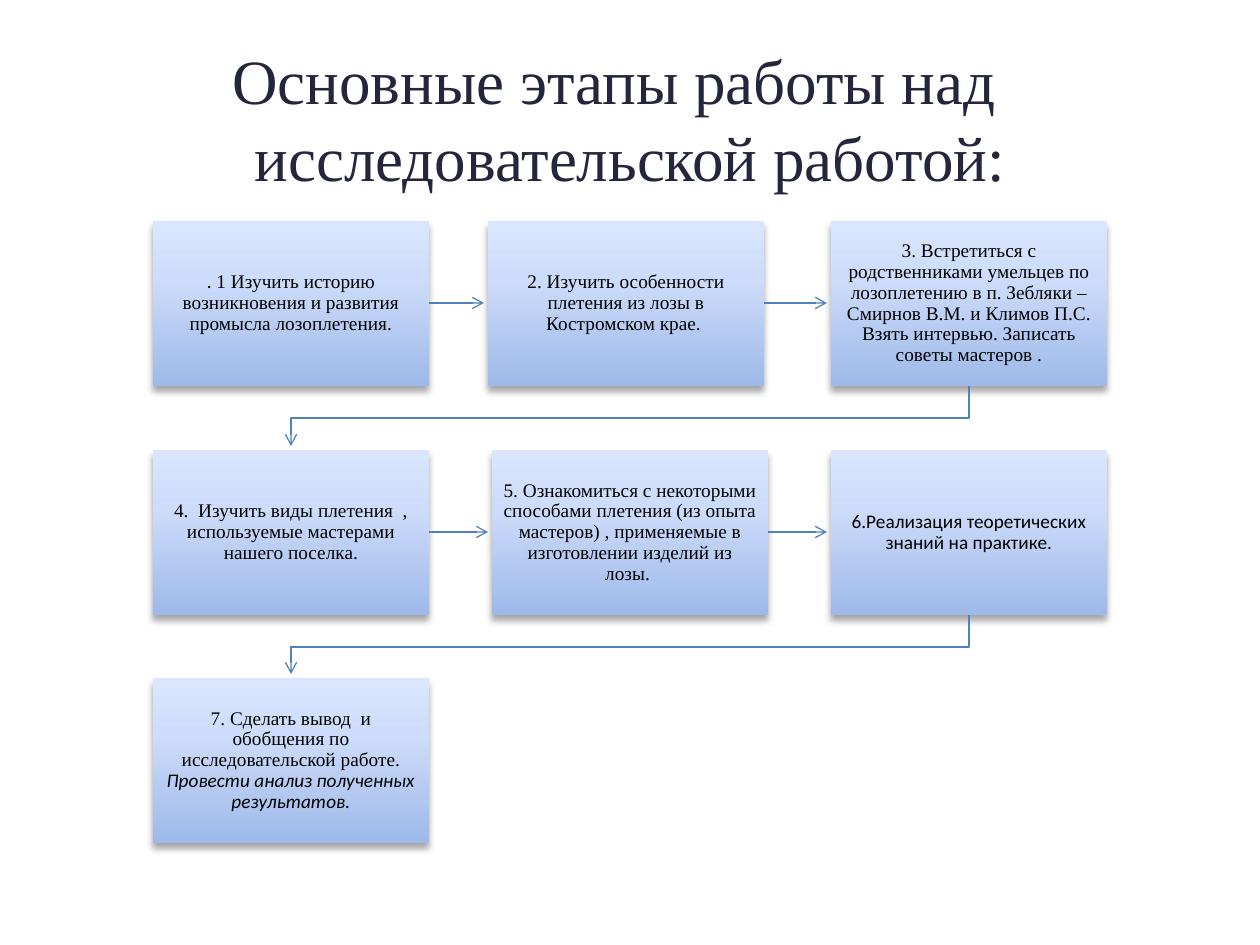
from lxml import etree
from pptx import Presentation
from pptx.dml.color import RGBColor
from pptx.enum.shapes import MSO_CONNECTOR, MSO_SHAPE
from pptx.enum.text import MSO_ANCHOR, PP_ALIGN
from pptx.oxml import parse_xml
from pptx.oxml.ns import nsdecls, qn
from pptx.util import Pt

PX = 914400 // 126
STRAIGHT = MSO_CONNECTOR.STRAIGHT
RECT = MSO_SHAPE.RECTANGLE
MIDDLE = MSO_ANCHOR.MIDDLE
CENTER = PP_ALIGN.CENTER

INK = RGBColor(0x24, 0x26, 0x3C)
BLACK = RGBColor(0x00, 0x00, 0x00)
BLUE = RGBColor(0x4F, 0x81, 0xBD)
GRADIENT = (
    (0, RGBColor(0x9E, 0xB9, 0xEA)),
    (65, RGBColor(0xCD, 0xDC, 0xFA)),
    (100, RGBColor(0xD9, 0xE6, 0xFE)),
)
SERIF, SANS = "Times New Roman", "Calibri"

BOX_W, BOX_H = 276, 165
ARROW_GAP = 4
ELBOW_DROP = 32
TITLE = "Основные этапы работы над  \vисследовательской работой:"
ROWS = (
    (221, (
        (153, ((".", SANS, False),
               (" 1 Изучить историю возникновения и развития промысла лозоплетения.", SERIF, False))),
        (488, (("2. Изучить особенности плетения из лозы в Костромском крае. ", SERIF, False),)),
        (831, (("3. Встретиться с родственниками умельцев по лозоплетению в п. Зебляки – "
                "Смирнов В.М. и Климов П.С. Взять интервью. Записать советы мастеров .", SERIF, False),)),
    )),
    (450, (
        (153, (("4.  Изучить виды плетения  , используемые мастерами нашего поселка.", SERIF, False),)),
        (492, (("5. Ознакомиться с некоторыми способами плетения (из опыта мастеров) , "
                "применяемые в изготовлении изделий из лозы. ", SERIF, False),)),
        (831, (("6.Реализация теоретических знаний на практике.", SANS, False),)),
    )),
    (678, (
        (153, (("7. Сделать вывод  и обобщения по исследовательской работе. ", SERIF, False),
               ("Провести анализ полученных результатов.", SANS, True))),
    )),
)


def add_title(s, x, y, w, h):
    """Place the centred two-line heading in its box."""
    sp = s.shapes.add_textbox(x * PX, y * PX, w * PX, h * PX)
    tf = sp.text_frame
    tf.word_wrap = True
    tf.vertical_anchor = MIDDLE
    p = tf.paragraphs[0]
    p.text = TITLE
    p.alignment = CENTER
    p.line_spacing = Pt(44)
    for r in p.runs:
        r.font.name, r.font.size = SERIF, Pt(36)
        r.font.color.rgb = INK


def style_box(sp):
    """Give a step box its three-stop gradient and soft shadow."""
    stops = "".join(
        f'<a:gs pos="{pos * 1000}"><a:srgbClr val="{color}"/></a:gs>' for pos, color in GRADIENT
    )
    sp.line.fill.background()
    sp.shadow.inherit = False
    spPr = sp.element.spPr
    spPr.find(qn("a:ln")).addprevious(parse_xml(
        f'<a:gradFill {nsdecls("a")} rotWithShape="1"><a:gsLst>{stops}</a:gsLst>'
        '<a:lin ang="16200000" scaled="0"/></a:gradFill>'
    ))
    spPr.find(qn("a:effectLst")).append(parse_xml(
        f'<a:outerShdw {nsdecls("a")} blurRad="{Pt(4)}" dist="{Pt(3)}" dir="5400000" rotWithShape="0">'
        f'<a:srgbClr val="{BLACK}"><a:alpha val="35000"/></a:srgbClr></a:outerShdw>'
    ))


def add_step(s, x, y, runs):
    """Place one step box with its centred text."""
    sp = s.shapes.add_shape(RECT, x * PX, y * PX, BOX_W * PX, BOX_H * PX)
    style_box(sp)
    tf = sp.text_frame
    tf.word_wrap = True
    tf.vertical_anchor = MIDDLE
    tf.margin_left = tf.margin_right = tf.margin_top = tf.margin_bottom = 11 * PX
    p = tf.paragraphs[0]
    p.alignment = CENTER
    p.line_spacing = 0.9
    for text, font, italic in runs:
        r = p.add_run()
        r.text = text
        r.font.name, r.font.size = font, Pt(11)
        r.font.italic = italic
        r.font.color.rgb = BLACK


def style_arrow(sp):
    """Give a connector or path a thin blue line with an open head."""
    sp.line.color.rgb = BLUE
    sp.line.width = Pt(0.75)
    spPr = sp.element.spPr
    ln = spPr.find(qn("a:ln"))
    etree.SubElement(ln, qn("a:tailEnd"), type="arrow")
    if spPr.find(qn("a:effectLst")) is None:
        ln.addnext(parse_xml(f'<a:effectLst {nsdecls("a")}/>'))


def add_straight(s, x, next_x, y):
    """Join a step to the next one in its row."""
    mid = y + BOX_H // 2
    style_arrow(s.shapes.add_connector(
        STRAIGHT, (x + BOX_W) * PX, mid * PX, (next_x - ARROW_GAP) * PX, mid * PX
    ))


def add_elbow(s, x, y, next_x, next_y):
    """Join the last step of a row to the first step of the next row."""
    start, end = x + BOX_W // 2, next_x + BOX_W // 2
    bottom = y + BOX_H
    turn = bottom + ELBOW_DROP
    path = s.shapes.build_freeform(start, bottom, scale=PX)
    path.add_line_segments(((start, turn), (end, turn), (end, next_y - ARROW_GAP)), close=False)
    sp = path.convert_to_shape()
    sp.fill.background()
    sp.shadow.inherit = False
    style_arrow(sp)


def add_flow(s):
    """Place all rows of steps and the arrows between them."""
    for y, steps in ROWS:
        for x, runs in steps:
            add_step(s, x, y, runs)
        for (x, _), (next_x, _) in zip(steps, steps[1:]):
            add_straight(s, x, next_x, y)
    for (y, steps), (next_y, next_steps) in zip(ROWS, ROWS[1:]):
        add_elbow(s, steps[-1][0], y, next_steps[0][0], next_y)


def main():
    """Build the slide and save it."""
    prs = Presentation()
    prs.slide_width, prs.slide_height = 1260 * PX, 945 * PX
    s = prs.slides.add_slide(prs.slide_layouts[6])
    add_title(s, 63, 38, 1134, 158)
    add_flow(s)
    prs.save("out.pptx")


if __name__ == "__main__":
    main()
